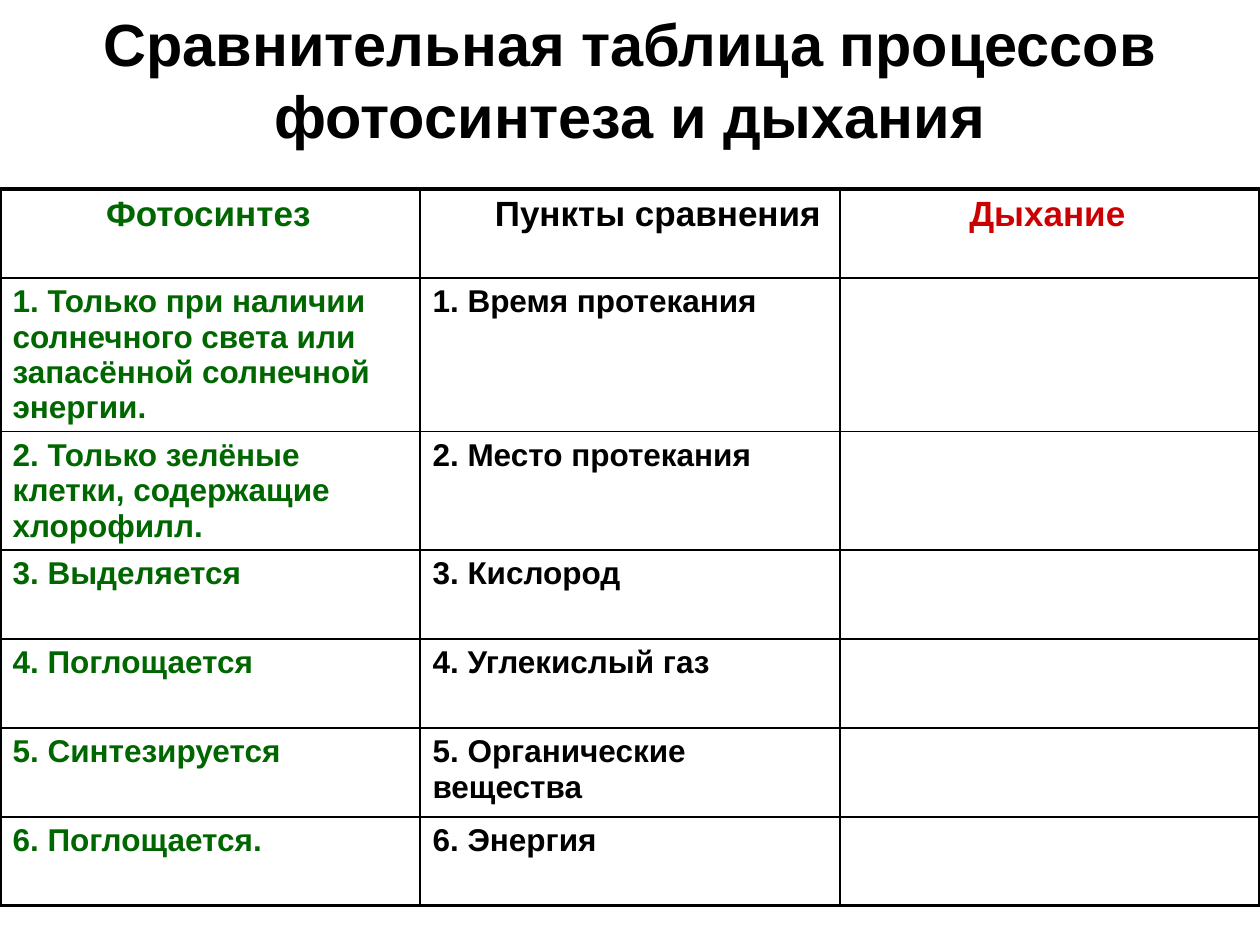
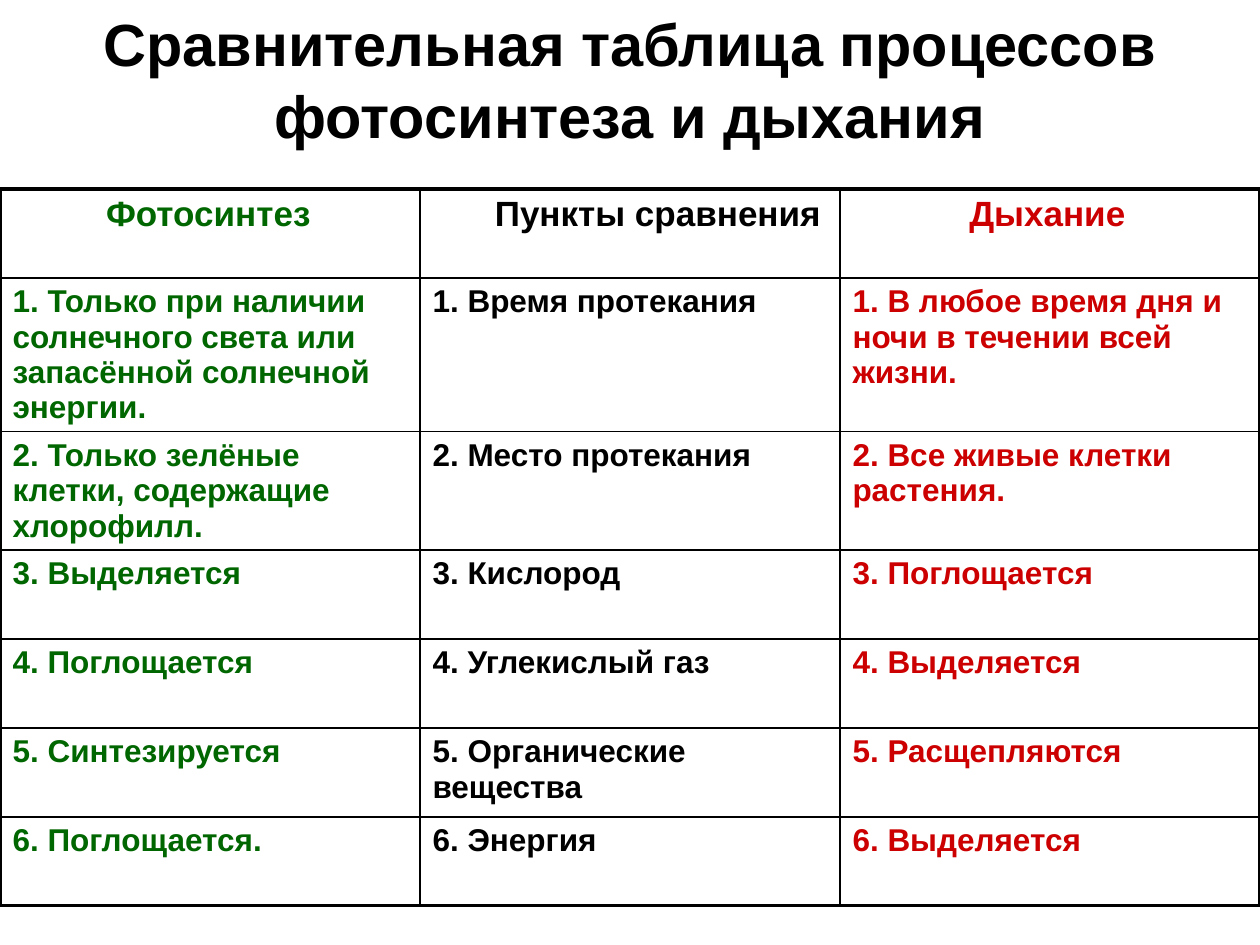
import pptx
import pptx.dml.color
import pptx.enum.text
import pptx.oxml
import pptx.oxml.ns
import pptx.util
from pptx.util import Pt

BLACK = pptx.dml.color.RGBColor(0x00, 0x00, 0x00)
GREEN = pptx.dml.color.RGBColor(0x00, 0x66, 0x00)
RED = pptx.dml.color.RGBColor(0xCC, 0x00, 0x00)
COLUMN_COLORS = (GREEN, BLACK, RED)
FONT = "Arial"
TITLE_SIZE, HEADER_SIZE, BODY_SIZE = 34, 20, 18

OUTER_BORDER, INNER_BORDER = 2.25, 1
ROW_HEIGHT = 50.8
CELL_MARGIN = 7.2
HEADER_INDENTS = (53.4, 35.6, 66.7)

TITLE_BOX = (36, 0, 648, 90)
TABLE_BOX = (0, 108, 720, 420.5)

TITLE = "Сравнительная таблица процессов фотосинтеза и дыхания"
HEADERS = ("Фотосинтез", "Пункты сравнения", "Дыхание")
PHOTOSYNTHESIS = (
    "1. Только при наличии солнечного света или запасённой солнечной энергии.",
    "2. Только зелёные клетки, содержащие хлорофилл.",
    "3. Выделяется",
    "4. Поглощается",
    "5. Синтезируется",
    "6. Поглощается.",
)
CRITERIA = (
    "1. Время протекания",
    "2. Место протекания",
    "3. Кислород",
    "4. Углекислый газ",
    "5. Органические вещества",
    "6. Энергия",
)
RESPIRATION = (
    "1. В любое время дня и ночи в течении всей жизни.",
    "2. Все живые клетки растения.",
    "3. Поглощается",
    "4. Выделяется",
    "5. Расщепляются",
    "6. Выделяется",
)
RESPIRATION_BLANK = ("",) * len(CRITERIA)


def format_text(text_frame, size, color):
    for paragraph in text_frame.paragraphs:
        for run in paragraph.runs:
            run.font.name = FONT
            run.font.size = Pt(size)
            run.font.bold = True
            run.font.color.rgb = color


def add_border(cell, side, width):
    namespace = pptx.oxml.ns.nsdecls("a")
    line = pptx.oxml.parse_xml(
        f'<a:ln{side} {namespace} w="{Pt(width)}" cap="flat" cmpd="sng">'
        f'<a:solidFill><a:srgbClr val="{BLACK}"/></a:solidFill>'
        f'<a:prstDash val="solid"/></a:ln{side}>'
    )
    cell._tc.get_or_add_tcPr().append(line)


def add_title(slide, box):
    title = slide.shapes.title
    title.left, title.top, title.width, title.height = map(Pt, box)
    text_frame = title.text_frame
    text_frame.text = TITLE
    text_frame.vertical_anchor = pptx.enum.text.MSO_ANCHOR.MIDDLE
    text_frame.auto_size = pptx.enum.text.MSO_AUTO_SIZE.NONE
    text_frame.paragraphs[0].alignment = pptx.enum.text.PP_ALIGN.CENTER
    format_text(text_frame, TITLE_SIZE, BLACK)


def add_comparison_table(slide, box, rows):
    row_count, column_count = len(rows), len(HEADERS)
    left, top, width, height = map(Pt, box)
    frame = slide.shapes.add_table(row_count, column_count, left, top, width, height)
    table = frame.table
    table.first_row = False
    table.horz_banding = False
    for table_row in table.rows:
        table_row.height = Pt(ROW_HEIGHT)
    frame.height = height

    for row_index, row in enumerate(rows):
        for column_index, text in enumerate(row):
            cell = table.cell(row_index, column_index)
            is_header = row_index == 0
            on_edge = {
                "L": column_index == 0,
                "R": column_index == column_count - 1,
                "T": is_header,
                "B": row_index == row_count - 1,
            }
            for side, outer in on_edge.items():
                add_border(cell, side, OUTER_BORDER if outer else INNER_BORDER)
            cell.fill.background()
            if is_header:
                cell.margin_left = Pt(CELL_MARGIN + HEADER_INDENTS[column_index])
            if text:
                cell.text_frame.text = text
                size = HEADER_SIZE if is_header else BODY_SIZE
                format_text(cell.text_frame, size, COLUMN_COLORS[column_index])


def add_comparison_slide(presentation, respiration):
    slide = presentation.slides.add_slide(presentation.slide_layouts[5])
    add_title(slide, TITLE_BOX)
    rows = [HEADERS, *zip(PHOTOSYNTHESIS, CRITERIA, respiration)]
    add_comparison_table(slide, TABLE_BOX, rows)


def main():
    presentation = pptx.Presentation()
    presentation.slide_width = Pt(720)
    presentation.slide_height = Pt(540)
    for respiration in (RESPIRATION_BLANK, RESPIRATION):
        add_comparison_slide(presentation, respiration)
    presentation.save("out.pptx")


if __name__ == "__main__":
    main()
